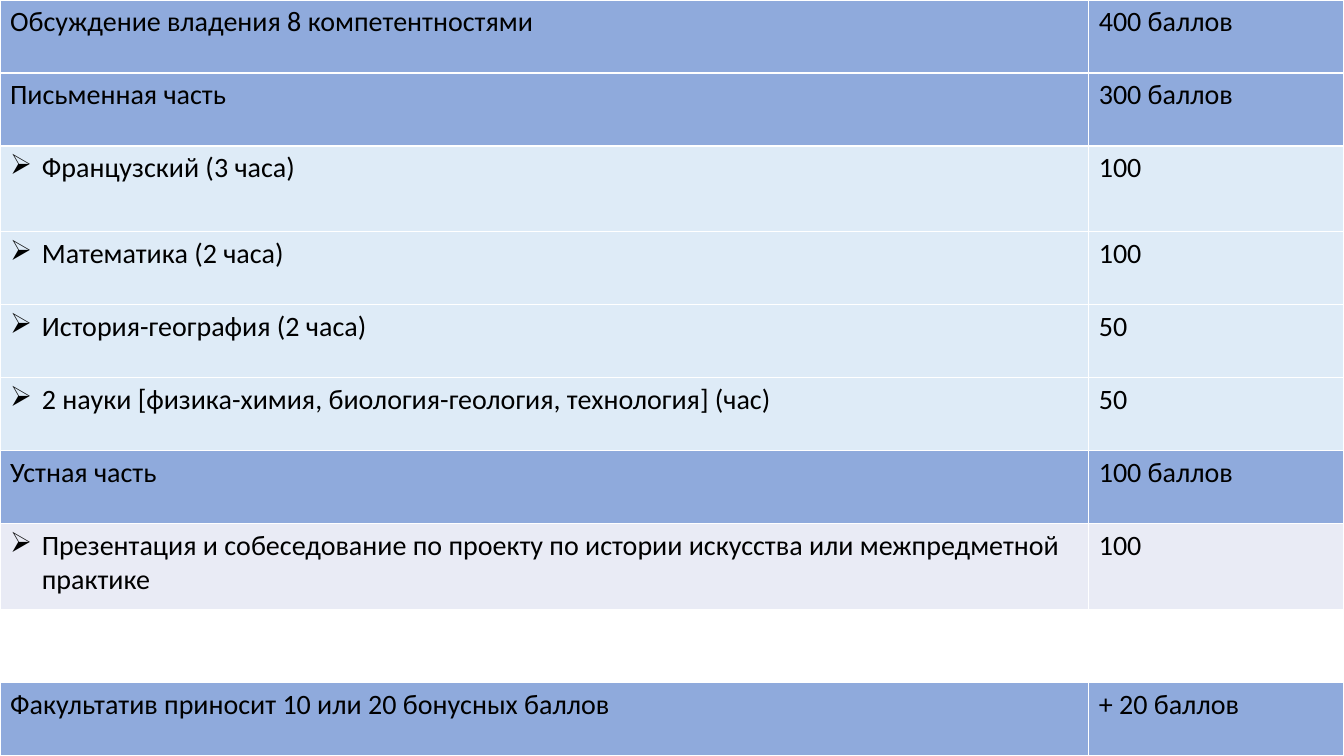
from lxml import etree
from pptx import Presentation
from pptx.dml.color import RGBColor
from pptx.oxml.ns import qn
from pptx.util import Cm, Pt

SLIDE_WIDTH, SLIDE_HEIGHT = Cm(33.86), Cm(19.05)
BLANK_LAYOUT = 6
SECTION, EXAM, ORAL = "8FAADC", "DEEBF7", "E9EBF5"
NORMAL_ROW, TALL_ROW = 1.84, 2.16
COLUMN_WIDTHS = 27.43, 6.43

SCORES = [
    ("Обсуждение владения 8 компетентностями", "400 баллов", SECTION, NORMAL_ROW),
    ("Письменная часть", "300 баллов", SECTION, NORMAL_ROW),
    ("Французский (3 часа)", "100", EXAM, TALL_ROW),
    ("Математика (2 часа)", "100", EXAM, NORMAL_ROW),
    ("История-география (2 часа)", "50", EXAM, NORMAL_ROW),
    ("2 науки [физика-химия, биология-геология, технология] (час)", "50", EXAM, NORMAL_ROW),
    ("Устная часть", "100 баллов", SECTION, NORMAL_ROW),
    ("Презентация и собеседование по проекту по истории искусства или межпредметной практике",
     "100", ORAL, TALL_ROW),
    ("", "", None, NORMAL_ROW),
    ("Факультатив приносит 10 или 20 бонусных баллов", "+ 20 баллов", SECTION, NORMAL_ROW),
]


def color(value):
    return RGBColor.from_string(value)


def write(frame, text, font="Calibri", size=20, ink="000000", bullet=None, indent=0.8):
    paragraph = frame.paragraphs[0]
    if text:
        run = paragraph.add_run()
        run.text = text
        run.font.name = font
        run.font.size = Pt(size)
        run.font.color.rgb = color(ink)
    if bullet:
        properties = paragraph._p.get_or_add_pPr()
        properties.set("marL", str(Cm(indent)))
        properties.set("indent", str(-Cm(indent)))
        etree.SubElement(properties, qn("a:buChar"), char=bullet)


class ScoreSlide:
    border_color = "FFFFFF"
    border_width = 1
    bullet = "➢"

    def __init__(self, presentation):
        self.slide = presentation.slides.add_slide(presentation.slide_layouts[BLANK_LAYOUT])

    def border(self, cell):
        properties = cell._tc.get_or_add_tcPr()
        for position, side in enumerate(("lnL", "lnR", "lnT", "lnB")):
            line = etree.Element(qn(f"a:{side}"), w=str(Pt(self.border_width)))
            fill = etree.SubElement(line, qn("a:solidFill"))
            etree.SubElement(fill, qn("a:srgbClr"), val=self.border_color)
            properties.insert(position, line)

    def cell(self, cell, text, fill, bullet):
        if fill:
            cell.fill.solid()
            cell.fill.fore_color.rgb = color(fill)
        else:
            cell.fill.background()
        self.border(cell)
        write(cell.text_frame, text, bullet=bullet)

    def table(self, scores, widths):
        table = self.slide.shapes.add_table(
            len(scores), len(widths), 0, 0, SLIDE_WIDTH, SLIDE_HEIGHT).table
        for column, width in zip(table.columns, widths):
            column.width = Cm(width)
        for index, (part, points, fill, height) in enumerate(scores):
            table.rows[index].height = Cm(height)
            bullet = self.bullet if fill in (EXAM, ORAL) else None
            self.cell(table.cell(index, 0), part, fill, bullet)
            self.cell(table.cell(index, 1), points, fill, None)


def main():
    presentation = Presentation()
    presentation.slide_width = SLIDE_WIDTH
    presentation.slide_height = SLIDE_HEIGHT
    ScoreSlide(presentation).table(SCORES, COLUMN_WIDTHS)
    presentation.save("out.pptx")


if __name__ == "__main__":
    main()
